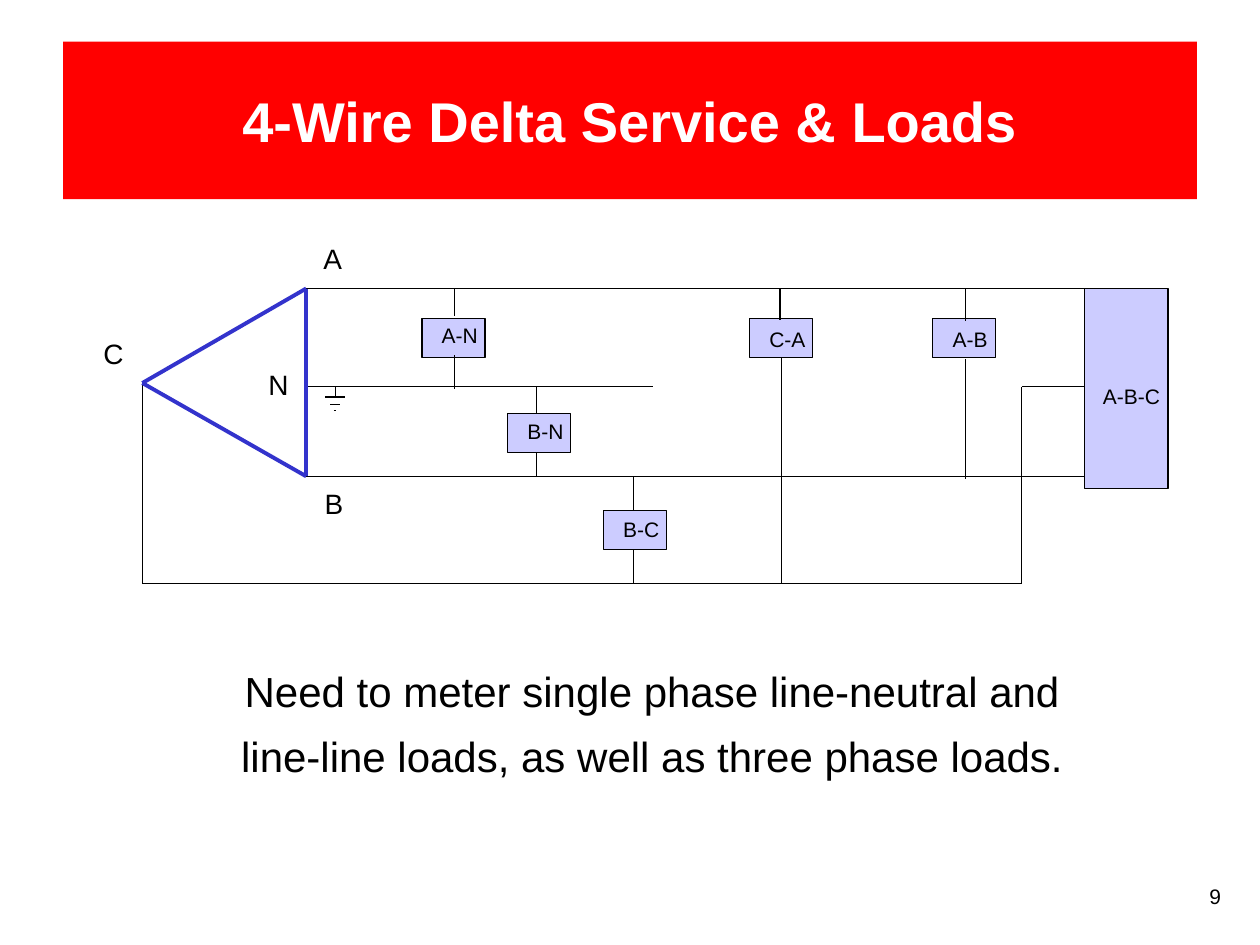
"""Build the slide on four-wire delta service and its loads."""
from typing import NamedTuple

from lxml.etree import SubElement
from pptx import Presentation
from pptx.dml.color import RGBColor
from pptx.enum.shapes import MSO_CONNECTOR as Conn, MSO_SHAPE as Shape
from pptx.enum.text import MSO_ANCHOR as Anchor, PP_ALIGN as Align
from pptx.oxml.ns import qn
from pptx.util import Inches, Pt

COLORS = {
    "band": "FF0000",
    "title": "FFFFFF",
    "ink": "000000",
    "load": "CCCCFF",
    "delta": "3333CC",
}
TOP, MID, LOW, BASE = 2.29, 3.07, 3.78, 4.63
APEX, BUS, RISER, END = 1.13, 2.43, 8.11, 8.6
ROW, HIGH, EARTH = 2.53, 0.31, 2.66


class Load(NamedTuple):
    name: str
    left: float
    top: float
    width: float
    height: float
    indent: float
    drop: float


class Label(NamedTuple):
    name: str
    left: float
    top: float


class Wire(NamedTuple):
    x1: float
    y1: float
    x2: float
    y2: float
    color: str = "ink"
    weight: float = 0.72


def across(x1: float, x2: float, y: float) -> Wire:
    return Wire(x1, y, x2, y)


def down(x: float, y1: float, y2: float) -> Wire:
    return Wire(x, y1, x, y2)


def side(x1: float, y1: float, x2: float, y2: float) -> Wire:
    return Wire(x1, y1, x2, y2, "delta", 2.25)


LOADS = [
    Load("A-N", 3.35, ROW, 0.5, HIGH, 0.1, 0.03),
    Load("B-N", 4.03, 3.28, 0.5, HIGH, 0.1, 0.04),
    Load("B-C", 4.79, 4.05, 0.5, HIGH, 0.1, 0.05),
    Load("A-B", 7.4, ROW, 0.5, HIGH, 0.1, 0.06),
    Load("C-A", 5.95, ROW, 0.5, HIGH, 0.1, 0.06),
    Load("A-B-C", 8.61, TOP, 0.66, 1.59, 0.08, 0.75),
]
LABELS = [
    Label("A", 2.54, 1.91),
    Label("C", 0.8, 2.66),
    Label("B", 2.55, 3.85),
    Label("N", 2.11, 2.91),
]
RAILS = [
    across(BUS, END, TOP),
    across(BUS, END, LOW),
    across(APEX, RISER, BASE),
    across(BUS, 5.18, MID),
    across(RISER, END, MID),
    down(APEX, 3.04, BASE),
    down(RISER, MID, BASE),
]
DROPS = [
    down(3.61, TOP, 2.51),
    down(3.61, 2.82, 3.09),
    down(4.26, MID, 3.28),
    down(4.26, 3.59, LOW),
    down(5.03, LOW, 4.05),
    down(5.03, 4.36, BASE),
    down(6.19, TOP, 2.54),
    down(6.2, 2.84, BASE),
    down(7.66, TOP, 2.55),
    down(7.66, 2.85, 3.8),
]
GROUND = [down(EARTH, MID, 3.15)] + [
    across(EARTH - half, EARTH + half, y)
    for half, y in ((0.08, 3.15), (0.04, 3.21), (0.01, 3.26))
]
DELTA = [
    side(BUS, TOP, BUS, LOW),
    side(APEX, 3.04, BUS, LOW),
    side(BUS, TOP, APEX, 3.04),
]
NOTE = [
    ["Need", " to ", "meter single phase line-neutral and"],
    ["line-line loads, as well as three phase loads."],
]


def paint(name: str) -> RGBColor:
    return RGBColor.from_string(COLORS[name])


def write(par, text: str, size: float, color: str = "ink", bold: bool = False) -> None:
    run = par.add_run()
    run.text = text
    font = run.font
    font.name, font.size, font.bold = "Arial", Pt(size), bold
    font.color.rgb = paint(color)


def set_frame(shape, left: float = 0, top: float = 0):
    frame = shape.text_frame
    frame.word_wrap = True
    frame.margin_left, frame.margin_top = Inches(left), Inches(top)
    frame.margin_right = frame.margin_bottom = 0
    frame.vertical_anchor = Anchor.TOP
    frame.paragraphs[0].alignment = Align.CENTER
    return frame


def add_text(slide, left: float, top: float, width: float, height: float):
    return slide.shapes.add_textbox(
        Inches(left), Inches(top), Inches(width), Inches(height))


def draw_wire(slide, wire: Wire) -> None:
    line = slide.shapes.add_connector(
        Conn.STRAIGHT, Inches(wire.x1), Inches(wire.y1), Inches(wire.x2), Inches(wire.y2))
    line.line.color.rgb = paint(wire.color)
    line.line.width = Pt(wire.weight)
    SubElement(line._element.spPr, qn("a:effectLst"))


def draw_load(slide, load: Load) -> None:
    box = slide.shapes.add_shape(
        Shape.RECTANGLE, Inches(load.left), Inches(load.top),
        Inches(load.width), Inches(load.height))
    box.shadow.inherit = False
    box.fill.solid()
    box.fill.fore_color.rgb = paint("load")
    box.line.color.rgb = paint("ink")
    box.line.width = Pt(0.72)
    frame = set_frame(box, load.indent, load.drop)
    write(frame.paragraphs[0], load.name, 12)


def draw_label(slide, label: Label) -> None:
    box = add_text(slide, label.left, label.top, 0.19, 0.29)
    write(set_frame(box, 0.01, 0.01).paragraphs[0], label.name, 16)


def draw_title(slide) -> None:
    title = slide.shapes.title
    title.left, title.top = Inches(0.5), Inches(0.33)
    title.width, title.height = Inches(9), Inches(1.25)
    title.fill.solid()
    title.fill.fore_color.rgb = paint("band")
    frame = set_frame(title)
    frame.vertical_anchor = Anchor.MIDDLE
    write(frame.paragraphs[0], "4-Wire Delta Service & Loads", 32, "title", True)


def draw_note(slide) -> None:
    frame = set_frame(add_text(slide, 1.9, 5.28, 6.55, 0.8))
    for i, runs in enumerate(NOTE):
        par = frame.add_paragraph() if i else frame.paragraphs[0]
        par.alignment = Align.CENTER
        par.space_before = Pt(8.4 if i else 0)
        for text in runs:
            write(par, text, 24)


def main() -> None:
    deck = Presentation()
    deck.slide_width, deck.slide_height = Inches(10), Inches(7.5)
    slide = deck.slides.add_slide(deck.slide_layouts[5])
    draw_title(slide)
    for load in LOADS:
        draw_load(slide, load)
    for wire in RAILS + DROPS + GROUND + DELTA:
        draw_wire(slide, wire)
    for label in LABELS:
        draw_label(slide, label)
    draw_note(slide)
    page = set_frame(add_text(slide, 9.5, 6.96, 0.4, 0.5), 0.1, 0.05)
    page.paragraphs[0].alignment = Align.LEFT
    write(page.paragraphs[0], "9", 12)
    deck.save("out.pptx")


if __name__ == "__main__":
    main()
